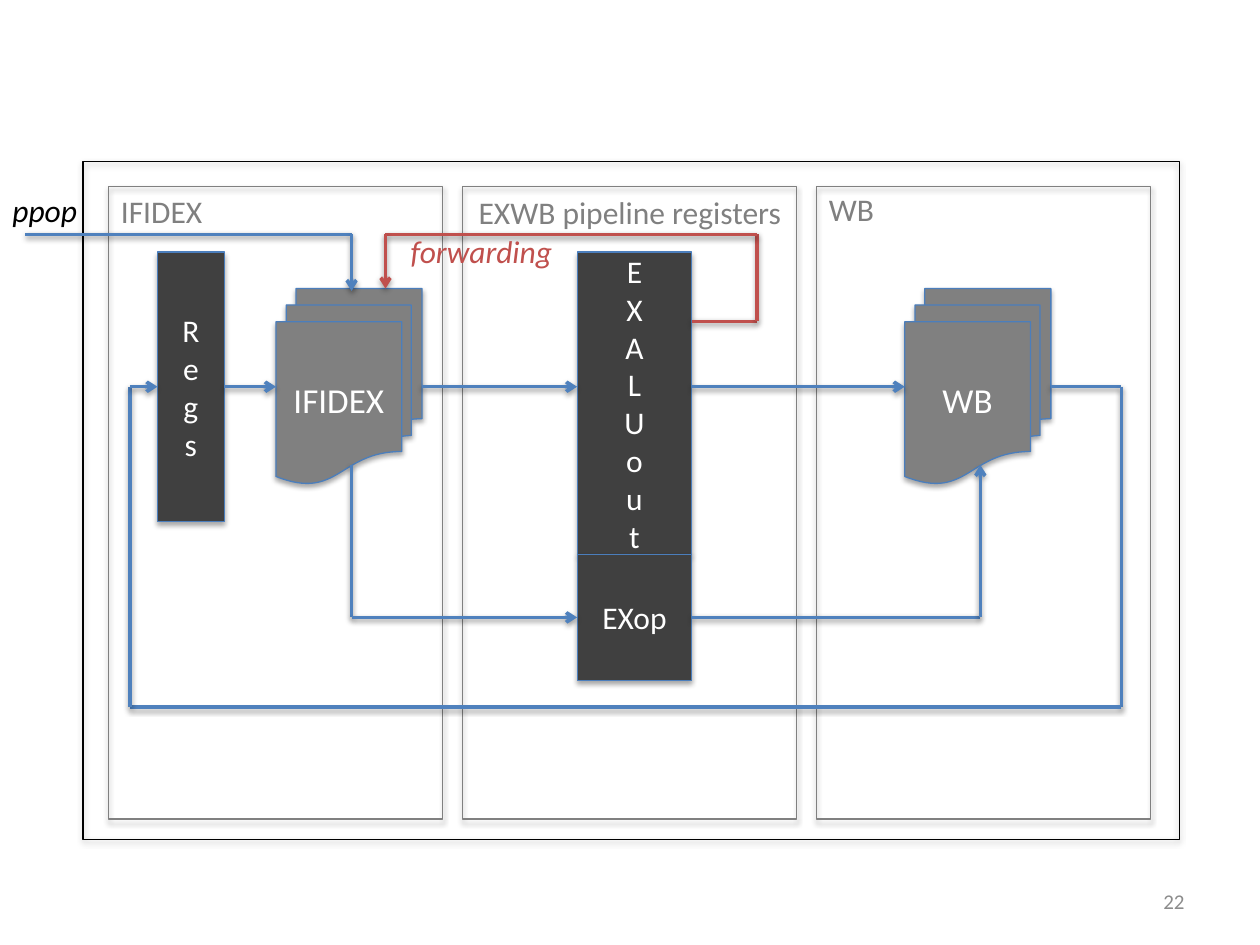
from dataclasses import dataclass
from itertools import pairwise

from pptx import Presentation
from pptx.dml.color import RGBColor
from pptx.enum.shapes import MSO_CONNECTOR, MSO_SHAPE
from pptx.enum.text import MSO_ANCHOR as Anchor, MSO_AUTO_SIZE as AutoSize, PP_ALIGN as Align
from pptx.oxml import parse_xml
from pptx.oxml.ns import nsdecls, qn
from pptx.util import Pt


@dataclass(frozen=True)
class Theme:
    font: str = "Calibri"
    label_size: float = 18
    stage_size: float = 20
    number_size: float = 12
    black: RGBColor = RGBColor(0, 0, 0)
    white: RGBColor = RGBColor(255, 255, 255)
    gray: RGBColor = RGBColor.from_string("808080")
    dark: RGBColor = RGBColor.from_string("404040")
    pale: RGBColor = RGBColor.from_string("8C8C8C")
    edge: RGBColor = RGBColor.from_string("4B7EBC")
    flow: RGBColor = RGBColor.from_string("4F81BD")
    forward: RGBColor = RGBColor.from_string("C0504D")


theme = Theme()


def write(frame, text, *, size=theme.label_size, color=theme.white, italic=False,
          align=Align.LEFT, anchor=Anchor.TOP, wrap=True):
    frame.text = text
    frame.word_wrap = wrap
    frame.vertical_anchor = anchor
    for paragraph in frame.paragraphs:
        paragraph.alignment = align
        for run in paragraph.runs:
            run.font.name = theme.font
            run.font.size = Pt(size)
            run.font.italic = italic
            run.font.color.rgb = color


def cast_shadow(item, distance, opacity):
    """Add a soft black shadow straight below; call after fill and line are set."""
    item.element.spPr.append(parse_xml(
        f'<a:effectLst {nsdecls("a")}>'
        f'<a:outerShdw blurRad="{Pt(3.1)}" dist="{Pt(distance)}" dir="5400000" rotWithShape="0">'
        f'<a:srgbClr val="000000"><a:alpha val="{opacity * 1000}"/></a:srgbClr>'
        '</a:outerShdw></a:effectLst>'))


prs = Presentation()
prs.slide_width, prs.slide_height = Pt(720), Pt(540)
slide = prs.slides.add_slide(prs.slide_layouts[6])
shapes = slide.shapes

# Pipeline stage frames and the processor outline
panels = [(62 + 202.3 * stage, 106.5, 191, 361.5, theme.gray) for stage in range(3)]
for left, top, width, height, color in panels + [(47.5, 92.2, 626.4, 387.4, theme.black)]:
    outline = shapes.add_shape(MSO_SHAPE.RECTANGLE, Pt(left), Pt(top), Pt(width), Pt(height))
    outline.fill.background()
    outline.line.color.rgb = color
    outline.line.width = Pt(0.75)
    cast_shadow(outline, 1.8, 35)

# Horizontal and vertical tracks shared by blocks and wires
regs_left, regs_right = 90, 128.2
ifidex_left, ifidex_right = 157.7, 241.2
ex_left, ex_right = 329.8, 395.3
wb_left, wb_right = 517, 600.5
ifidex_mid, wb_mid = 200.9, 560.2
loop_left, loop_right = 74.2, 640.8
block_top, stack_top, stack_bottom = 144, 164.9, 265.7
input_y, data_y, op_y, loop_y = 133.9, 221, 352.8, 403.9

# Registers (dark boxes) and logic stages (gray stacks)
box, stack = MSO_SHAPE.RECTANGLE, MSO_SHAPE.FLOWCHART_MULTIDOCUMENT
ex_alu_out = "\v".join("EXALU") + "\n" + "\n".join("out")
blocks = [
    (box, regs_left, regs_right, block_top, 154, "\n".join("Regs")),
    (stack, ifidex_left, ifidex_right, stack_top, 111.6, "IFIDEX"),
    (stack, wb_left, wb_right, stack_top, 111.6, "WB"),
    (box, ex_left, ex_right, block_top, 172.8, ex_alu_out),
    (box, ex_left, ex_right, 316.8, 72, "EXop"),
]
for kind, left, right, top, height, text in blocks:
    block = shapes.add_shape(kind, Pt(left), Pt(top), Pt(right - left), Pt(height))
    block.fill.solid()
    block.fill.fore_color.rgb = theme.dark if kind == box else theme.gray
    block.line.color.rgb = theme.edge
    block.line.width = Pt(0.75)
    cast_shadow(block, 1.8, 35)
    write(block.text_frame, text, size=theme.label_size if kind == box else theme.stage_size,
          align=Align.CENTER, anchor=Anchor.MIDDLE)

# Each wire runs through its corner points and ends in an arrowhead
wires = [
    (theme.flow, [(regs_right, data_y), (ifidex_left, data_y)]),
    (theme.flow, [(ifidex_right, data_y), (ex_left, data_y)]),
    (theme.flow, [(ex_right, data_y), (wb_left, data_y)]),
    (theme.flow, [(wb_right, data_y), (loop_right, data_y), (loop_right, loop_y),
                  (loop_left, loop_y), (loop_left, data_y), (regs_left, data_y)]),
    (theme.flow, [(14.4, input_y), (ifidex_mid, input_y), (ifidex_mid, 166.3)]),
    (theme.flow, [(ifidex_mid, stack_bottom), (ifidex_mid, op_y), (ex_left, op_y)]),
    (theme.flow, [(ex_right, op_y), (wb_mid, op_y), (wb_mid, stack_bottom)]),
    (theme.forward, [(ex_right, 183.6), (432.7, 183.6), (432.7, input_y),
                     (220.3, input_y), (220.3, stack_top)]),
]
for color, corners in wires:
    for start, end in pairwise(corners):
        wire = shapes.add_connector(MSO_CONNECTOR.STRAIGHT, *map(Pt, start + end))
        wire.line.color.rgb = color
        wire.line.width = Pt(2)
        if end == corners[-1]:
            wire.element.spPr.find(qn("a:ln")).append(
                parse_xml(f'<a:tailEnd {nsdecls("a")} type="arrow"/>'))
        cast_shadow(wire, 1.6, 38)

labels = [
    ("IFIDEX", 62, 106, 61.2, theme.gray, False),
    ("EXWB pipeline registers", 266.4, 106.9, 190, theme.gray, False),
    ("WB", 466.6, 105.2, 41, theme.gray, False),
    ("ppop", 0, 105.4, 57.6, theme.black, True),
    ("forwarding", 227.5, 129.2, 101.5, theme.forward, True),
]
for text, left, top, width, color, italic in labels:
    label = shapes.add_textbox(Pt(left), Pt(top), Pt(width), Pt(29))
    write(label.text_frame, text, color=color, italic=italic, wrap=False)
    label.text_frame.auto_size = AutoSize.SHAPE_TO_FIT_TEXT

page_number = shapes.add_textbox(Pt(516), Pt(500.5), Pt(168), Pt(28.8))
write(page_number.text_frame, "22", size=theme.number_size, color=theme.pale,
      align=Align.RIGHT, anchor=Anchor.MIDDLE)

prs.save("out.pptx")
